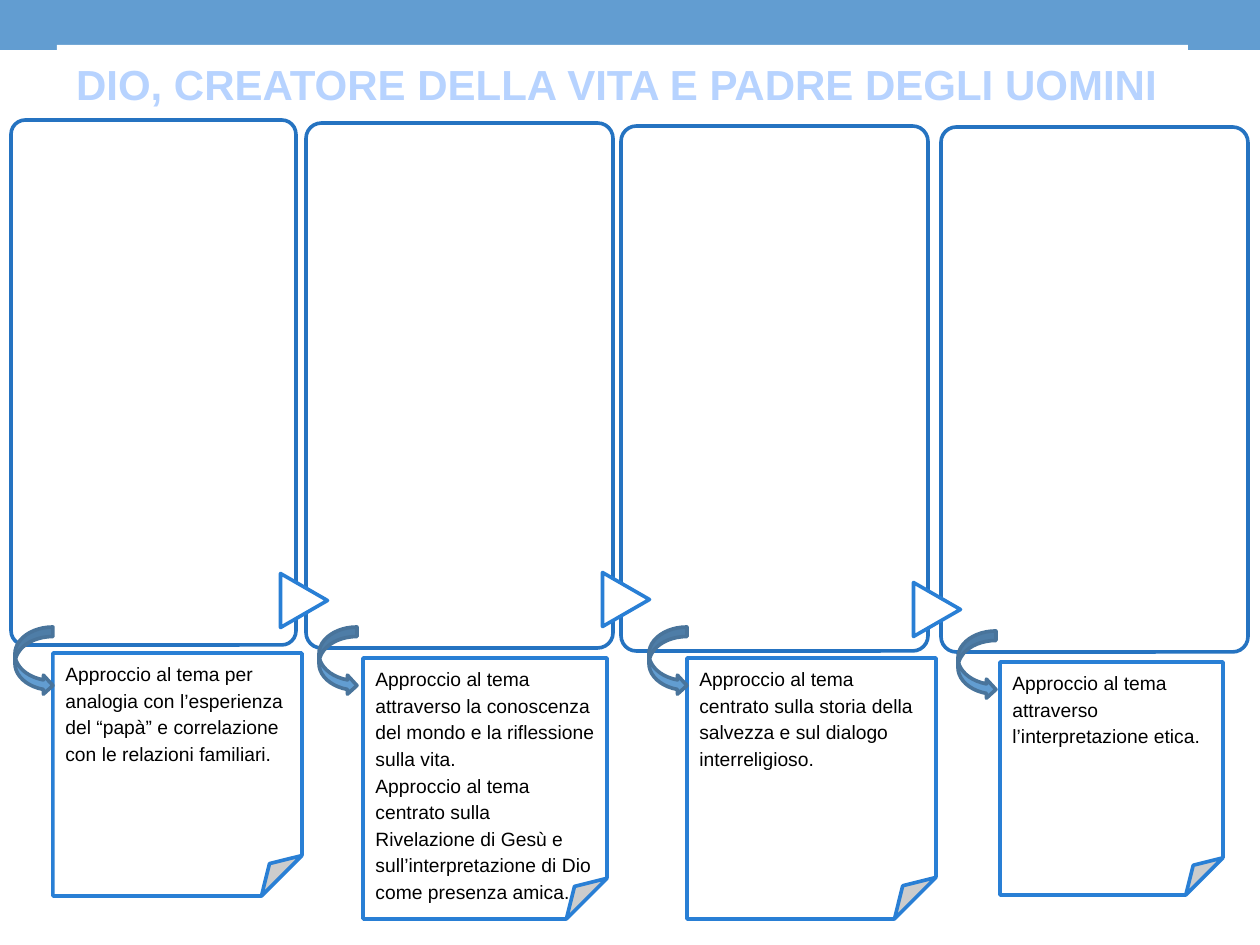
import pptx
import pptx.util
import pptx.dml.color
import pptx.enum.shapes
import pptx.enum.text

TITLE = "DIO, CREATORE DELLA VITA E PADRE DEGLI UOMINI "

# Each stage: panel, note and arrow places in px, then the note's paragraphs.
STAGES = [
    {"panel": (11, 120, 285, 525), "note": (53, 653, 249, 243), "arrow": (15, 627),
     "text": ["Approccio al tema per analogia con l’esperienza del “papà” "
              "e correlazione con le relazioni familiari."]},
    {"panel": (306, 123, 307, 525), "note": (363, 658, 244, 261), "arrow": (319, 627),
     "text": ["Approccio al tema attraverso la conoscenza del mondo e la "
              "riflessione sulla vita.",
              "Approccio al tema centrato sulla Rivelazione di Gesù e "
              "sull’interpretazione di Dio come presenza amica."]},
    {"panel": (621, 126, 307, 525), "note": (687, 658, 249, 261), "arrow": (649, 627),
     "text": ["Approccio al tema centrato sulla storia della salvezza e sul "
              "dialogo interreligioso."]},
    {"panel": (941, 127, 307, 525), "note": (1000, 662, 223, 233), "arrow": (958, 631),
     "text": ["Approccio al tema attraverso l’interpretazione etica."]},
]
STEPS = [(277, 577), (599, 576), (910, 586)]
STEP_SIZE = (54, 47)
ARROW_SIZE = (38, 68)

KIND = pptx.enum.shapes.MSO_SHAPE
ALIGN = pptx.enum.text.PP_ALIGN
NOTE_FONT = {"name": "Arial", "size": pptx.util.Pt(11), "bold": False}
TITLE_FONT = {"name": "Arial", "size": pptx.util.Pt(24), "bold": True}


def px(n):
    return pptx.util.Emu(round(n * 914400 / 126))


def rgb(code):
    return pptx.dml.color.RGBColor.from_string(code)


def draw(slide, kind, box, fill, line=None):
    shape = slide.shapes.add_shape(kind, *map(px, box))
    shape.shadow.inherit = False
    shape.fill.solid()
    shape.fill.fore_color.rgb = rgb(fill)
    if line:
        shape.line.color.rgb = rgb(line)
        shape.line.width = pptx.util.Pt(2.08)
    else:
        shape.line.fill.background()
    return shape


def write(shape, lines, font, color, align, after=0):
    frame = shape.text_frame
    frame.word_wrap = True
    frame.vertical_anchor = pptx.enum.text.MSO_ANCHOR.TOP
    layout = {"alignment": align, "line_spacing": 1.15,
              "space_after": pptx.util.Pt(after)}
    for i, line in enumerate(lines):
        para = frame.add_paragraph() if i else frame.paragraphs[0]
        for key, value in layout.items():
            setattr(para, key, value)
        run = para.add_run()
        run.text = line
        for key, value in font.items():
            setattr(run.font, key, value)
        run.font.color.rgb = rgb(color)


def main():
    deck = pptx.Presentation()
    deck.slide_width, deck.slide_height = px(1260), px(945)
    slide = deck.slides.add_slide(deck.slide_layouts[6])

    draw(slide, KIND.RECTANGLE, (0, 0, 1260, 50), "629DD1")
    for stage in STAGES:
        panel = draw(slide, KIND.ROUNDED_RECTANGLE, stage["panel"], "FFFFFF", "2573C1")
        panel.adjustments[0] = 0.05
    for spot in STEPS:
        step = draw(slide, KIND.FLOWCHART_EXTRACT, spot + STEP_SIZE, "FFFFFF", "297FD5")
        step.rotation = 90
    for stage in STAGES:
        note = draw(slide, KIND.FOLDED_CORNER, stage["note"], "FFFFFF", "297FD5")
        write(note, stage["text"], NOTE_FONT, "000000", ALIGN.LEFT)
    for stage in STAGES:
        draw(slide, KIND.CURVED_RIGHT_ARROW, stage["arrow"] + ARROW_SIZE,
             "629DD1", "49749B")
    title = draw(slide, KIND.RECTANGLE, (57, 45, 1131, 54), "FFFFFF")
    write(title, [TITLE], TITLE_FONT, "B7D3FF", ALIGN.CENTER, after=10)

    deck.save("out.pptx")


if __name__ == "__main__":
    main()
